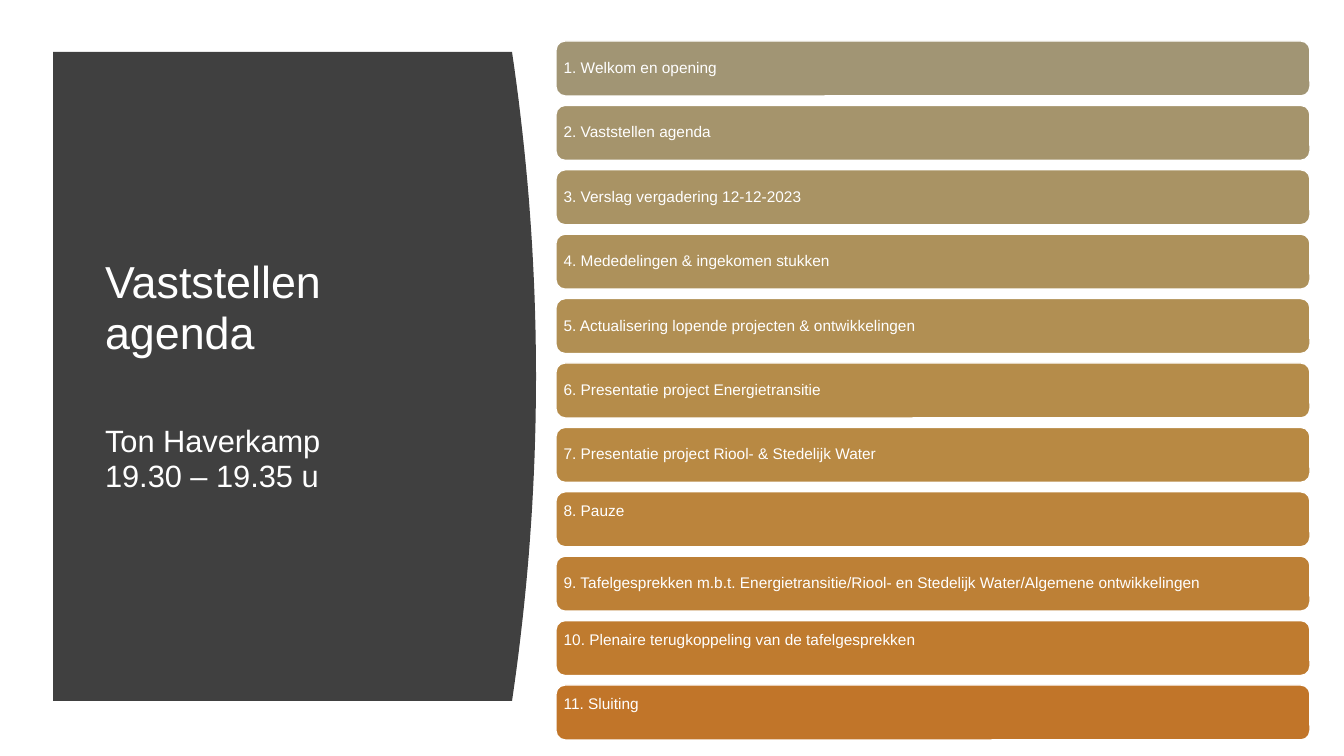
from pptx import Presentation
from pptx.dml.color import RGBColor
from pptx.enum.shapes import MSO_SHAPE
from pptx.enum.text import MSO_ANCHOR, MSO_AUTO_SIZE, PP_ALIGN
from pptx.util import Emu, Pt

ROUNDED = MSO_SHAPE.ROUNDED_RECTANGLE
MIDDLE, TOP = MSO_ANCHOR.MIDDLE, MSO_ANCHOR.TOP
NO_AUTOFIT = MSO_AUTO_SIZE.NONE
LEFT = PP_ALIGN.LEFT

TITLE = "Vaststellen agenda"
SPEAKER = "Ton Haverkamp\v19.30 – 19.35 u"
AGENDA = [
    ("1. Welkom en opening", "A19574", MIDDLE),
    ("2. Vaststellen agenda", "A5946C", MIDDLE),
    ("3. Verslag vergadering 12-12-2023", "A99364", MIDDLE),
    ("4. Mededelingen & ingekomen stukken", "AD915B", MIDDLE),
    ("5. Actualisering lopende projecten & ontwikkelingen", "B18F53", MIDDLE),
    ("6. Presentatie project Energietransitie", "B58C4A", MIDDLE),
    ("7. Presentatie project Riool- & Stedelijk Water", "B88943", MIDDLE),
    ("8. Pauze", "BB843C", TOP),
    ("9. Tafelgesprekken m.b.t. Energietransitie/Riool- en Stedelijk Water/Algemene ontwikkelingen",
     "BD8036", MIDDLE),
    ("10. Plenaire terugkoppeling van de tafelgesprekken", "BF7B2F", TOP),
    ("11. Sluiting", "C17529", TOP),
]
WHITE, CHARCOAL = "FFFFFF", "404040"

SLIDE_WIDTH, SLIDE_HEIGHT = 1344, 756
PANEL_LEFT, PANEL_TOP, PANEL_EDGE, PANEL_HEIGHT, PANEL_BULGE = 53, 52, 512, 649, 24
CURVE_STEPS = 40
TITLE_BOX = (95, 112, 377, 528)
BAR_LEFT, BAR_WIDTH, BAR_HEIGHT = 556, 754, 55
FIRST_BAR_TOP, LAST_BAR_TOP = 41, 685


def px(value):
    return Emu(round(value * 914400 / 100.8))


def color(hex_string):
    return RGBColor.from_string(hex_string)


def write(paragraph, text, size, spacing, before=0):
    paragraph.text = text
    paragraph.alignment = LEFT
    paragraph.line_spacing = spacing
    if before:
        paragraph.space_before = Pt(before)
    for run in paragraph.runs:
        run.font.name = "Arial"
        run.font.size = Pt(size)
        run.font.color.rgb = color(WHITE)


def add_panel(slide):
    points = []
    for step in range(CURVE_STEPS + 1):
        share = step / CURVE_STEPS
        x = PANEL_EDGE + PANEL_BULGE * 4 * share * (1 - share)
        points.append((px(x), px(PANEL_TOP + PANEL_HEIGHT * share)))
    points.append((px(PANEL_LEFT), px(PANEL_TOP + PANEL_HEIGHT)))
    builder = slide.shapes.build_freeform(px(PANEL_LEFT), px(PANEL_TOP))
    builder.add_line_segments(points, close=True)
    panel = builder.convert_to_shape()
    panel.shadow.inherit = False
    panel.fill.solid()
    panel.fill.fore_color.rgb = color(CHARCOAL)
    panel.line.fill.background()
    return panel


def fill_title(title):
    title.left, title.top, title.width, title.height = map(px, TITLE_BOX)
    frame = title.text_frame
    frame.word_wrap = True
    frame.auto_size = NO_AUTOFIT
    frame.vertical_anchor = MIDDLE
    write(frame.paragraphs[0], TITLE, 32, 0.95)
    write(frame.add_paragraph(), SPEAKER, 22, 0.95, before=46)


def add_bar(slide, top, text, fill, anchor):
    bar = slide.shapes.add_shape(ROUNDED, px(BAR_LEFT), px(top), px(BAR_WIDTH), px(BAR_HEIGHT))
    bar.shadow.inherit = False
    bar.fill.solid()
    bar.fill.fore_color.rgb = color(fill)
    bar.line.color.rgb = color(WHITE)
    bar.line.width = Pt(1)
    frame = bar.text_frame
    frame.word_wrap = True
    frame.vertical_anchor = anchor
    frame.margin_left = frame.margin_right = px(5)
    frame.margin_top = frame.margin_bottom = px(9)
    write(frame.paragraphs[0], text, 11, 0.9)


def main():
    presentation = Presentation()
    presentation.slide_width = px(SLIDE_WIDTH)
    presentation.slide_height = px(SLIDE_HEIGHT)
    slide = presentation.slides.add_slide(presentation.slide_layouts[5])
    title = slide.shapes.title
    panel = add_panel(slide)
    title._element.addprevious(panel._element)
    fill_title(title)
    pitch = (LAST_BAR_TOP - FIRST_BAR_TOP) / (len(AGENDA) - 1)
    for index, (text, fill, anchor) in enumerate(AGENDA):
        add_bar(slide, FIRST_BAR_TOP + index * pitch, text, fill, anchor)
    presentation.save("out.pptx")


if __name__ == "__main__":
    main()
